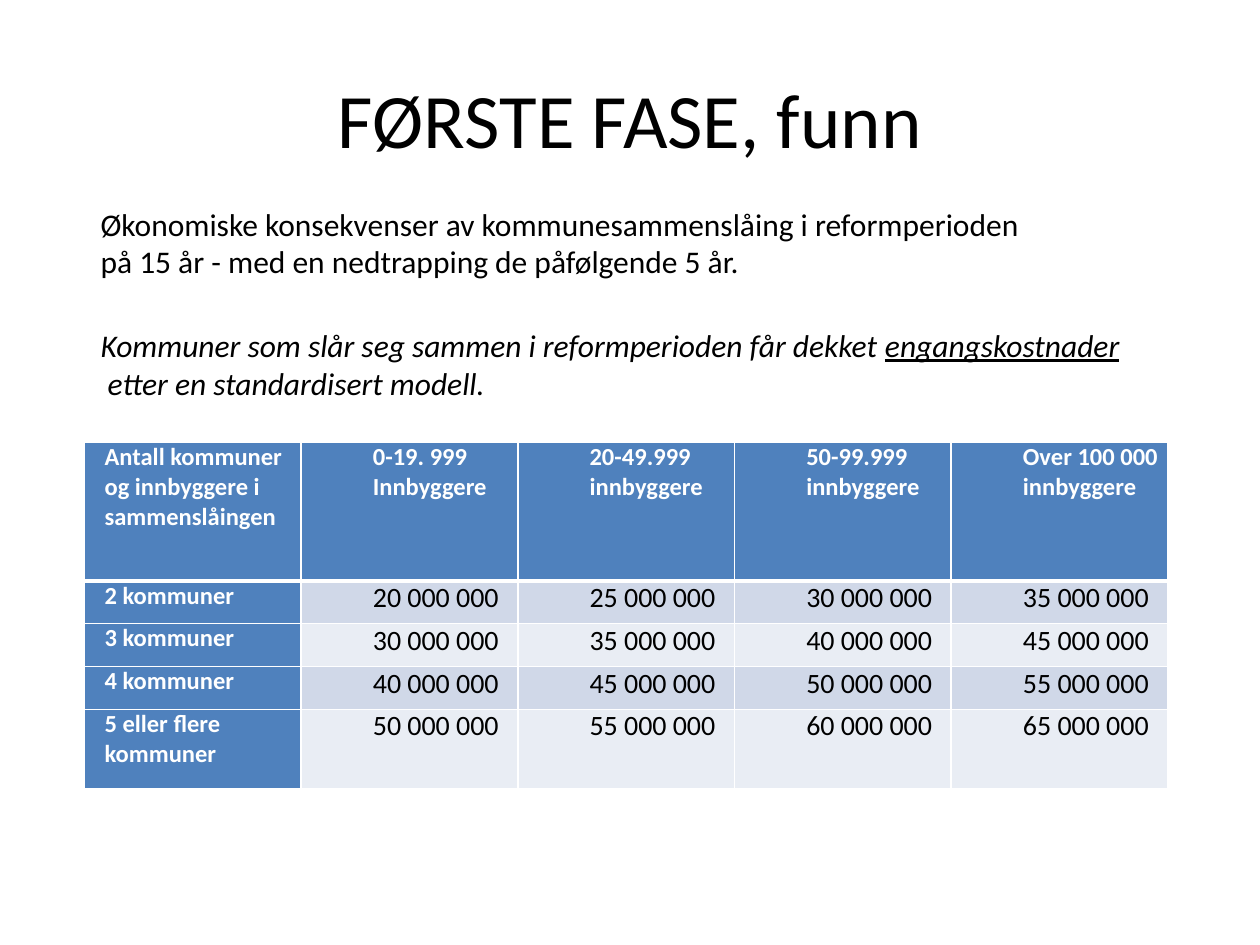
from dataclasses import dataclass

from lxml.etree import SubElement
from pptx import Presentation
from pptx.dml.color import RGBColor
from pptx.enum.text import MSO_ANCHOR, MSO_AUTO_SIZE, PP_ALIGN
from pptx.oxml.ns import qn
from pptx.util import Inches, Pt

SLIDE_WIDTH, SLIDE_HEIGHT = Inches(10), Inches(7.5)
FONT = "Calibri"
COLORS = {
    "text": "000000",
    "light": "FFFFFF",
    "heading": "4F81BD",
    "odd_row": "D0D8E8",
    "even_row": "E9EDF4",
}


@dataclass(frozen=True)
class Box:
    left: float
    top: float
    width: float
    height: float

    def place(self) -> tuple[int, int, int, int]:
        return (
            int(self.left * SLIDE_WIDTH),
            int(self.top * SLIDE_HEIGHT),
            int(self.width * SLIDE_WIDTH),
            int(self.height * SLIDE_HEIGHT),
        )


@dataclass(frozen=True)
class Style:
    size: float
    color: str = "text"
    bold: bool = False
    italic: bool = False
    underline: bool = False


@dataclass(frozen=True)
class CellLook:
    style: Style
    fill: str
    indent: float
    bottom_line: float = 1


TITLE_STYLE = Style(44)
BODY = Style(18)
ITALIC = Style(18, italic=True)
UNDERLINED = Style(18, italic=True, underline=True)
HEADING = Style(14, "light", bold=True)
AMOUNT = Style(16)

TITLE_BOX = Box(0.05, 0.04, 0.9, 0.17)
INTRO_BOX = Box(0.07, 0.21, 0.85, 0.22)
RULE_BOX = Box(0.07, 0.34, 0.84, 0.09)

INTRO = [
    [("Økonomiske konsekvenser av kommunesammenslåing i reformperioden", BODY)],
    [("på 15 år - med en nedtrapping de påfølgende 5 år.", BODY)],
]
RULE = [
    [
        ("Kommuner som slår seg sammen i reformperioden får dekket ", ITALIC),
        ("engangskostnader", UNDERLINED),
    ],
    [(" etter en standardisert modell.", ITALIC)],
]

TABLE_LEFT, TABLE_TOP = 0.67, 3.51
COLUMN_WIDTH = 1.72
ROW_HEIGHTS = [1.1, 0.34, 0.34, 0.34, 0.63]
ROWS = [
    ["Antall kommuner og innbyggere i sammenslåingen", "0-19. 999\nInnbyggere",
     "20-49.999\ninnbyggere", "50-99.999\ninnbyggere", "Over 100 000\ninnbyggere"],
    ["2 kommuner", "20 000 000", "25 000 000", "30 000 000", "35 000 000"],
    ["3 kommuner", "30 000 000", "35 000 000", "40 000 000", "45 000 000"],
    ["4 kommuner", "40 000 000", "45 000 000", "50 000 000", "55 000 000"],
    ["5 eller flere kommuner", "50 000 000", "55 000 000", "60 000 000", "65 000 000"],
]


def color(name: str) -> RGBColor:
    return RGBColor.from_string(COLORS[name])


def add_run(paragraph, text: str, style: Style) -> None:
    run = paragraph.add_run()
    run.text = text
    run.font.name = FONT
    run.font.size = Pt(style.size)
    run.font.bold = style.bold
    run.font.italic = style.italic
    run.font.underline = style.underline
    run.font.color.rgb = color(style.color)


def fill_paragraphs(text_frame, lines: list, indent: float = 0) -> None:
    for index, runs in enumerate(lines):
        paragraph = text_frame.add_paragraph() if index else text_frame.paragraphs[0]
        if indent:
            paragraph._p.get_or_add_pPr().set("marL", str(Inches(indent)))
        for text, style in runs:
            add_run(paragraph, text, style)


def add_title(slide, text: str) -> None:
    title = slide.shapes.title
    title.left, title.top, title.width, title.height = TITLE_BOX.place()
    title.text_frame.vertical_anchor = MSO_ANCHOR.MIDDLE
    paragraph = title.text_frame.paragraphs[0]
    paragraph.alignment = PP_ALIGN.CENTER
    add_run(paragraph, text, TITLE_STYLE)


def add_text(slide, box: Box, lines: list, wrap: bool, anchor) -> None:
    text_frame = slide.shapes.add_textbox(*box.place()).text_frame
    text_frame.word_wrap = wrap
    text_frame.vertical_anchor = anchor
    text_frame.auto_size = MSO_AUTO_SIZE.NONE if wrap else MSO_AUTO_SIZE.SHAPE_TO_FIT_TEXT
    fill_paragraphs(text_frame, lines)


def add_borders(cell, bottom_line: float) -> None:
    properties = cell._tc.get_or_add_tcPr()
    for side, width in (("L", 1), ("R", 1), ("T", 1), ("B", bottom_line)):
        line = SubElement(properties, qn(f"a:ln{side}"), w=str(Pt(width)))
        solid = SubElement(line, qn("a:solidFill"))
        SubElement(solid, qn("a:srgbClr"), val=COLORS["light"])


def look_of(row: int, column: int) -> CellLook:
    indent = 0.5 if column else 0.09
    if row == 0:
        return CellLook(HEADING, "heading", indent, bottom_line=3)
    if column == 0:
        return CellLook(HEADING, "heading", indent)
    return CellLook(AMOUNT, "odd_row" if row % 2 else "even_row", indent)


def fill_cell(cell, text: str, look: CellLook) -> None:
    cell.margin_left = cell.margin_right = Inches(0.07)
    cell.margin_top = cell.margin_bottom = 0
    add_borders(cell, look.bottom_line)
    cell.fill.solid()
    cell.fill.fore_color.rgb = color(look.fill)
    lines = [[(line, look.style)] for line in text.split("\n")]
    fill_paragraphs(cell.text_frame, lines, look.indent)


def add_cost_table(slide) -> None:
    column_count = len(ROWS[0])
    table = slide.shapes.add_table(
        len(ROWS), column_count, Inches(TABLE_LEFT), Inches(TABLE_TOP),
        Inches(COLUMN_WIDTH * column_count), Inches(sum(ROW_HEIGHTS)),
    ).table
    table.first_col = True
    for column in table.columns:
        column.width = Inches(COLUMN_WIDTH)
    for row, height in enumerate(ROW_HEIGHTS):
        table.rows[row].height = Inches(height)
        for column, text in enumerate(ROWS[row]):
            fill_cell(table.cell(row, column), text, look_of(row, column))


def main() -> None:
    presentation = Presentation()
    presentation.slide_width, presentation.slide_height = SLIDE_WIDTH, SLIDE_HEIGHT
    slide = presentation.slides.add_slide(presentation.slide_layouts[5])
    add_title(slide, "FØRSTE FASE, funn")
    add_text(slide, INTRO_BOX, INTRO, True, MSO_ANCHOR.TOP)
    add_cost_table(slide)
    add_text(slide, RULE_BOX, RULE, False, MSO_ANCHOR.MIDDLE)
    presentation.save("out.pptx")


if __name__ == "__main__":
    main()
